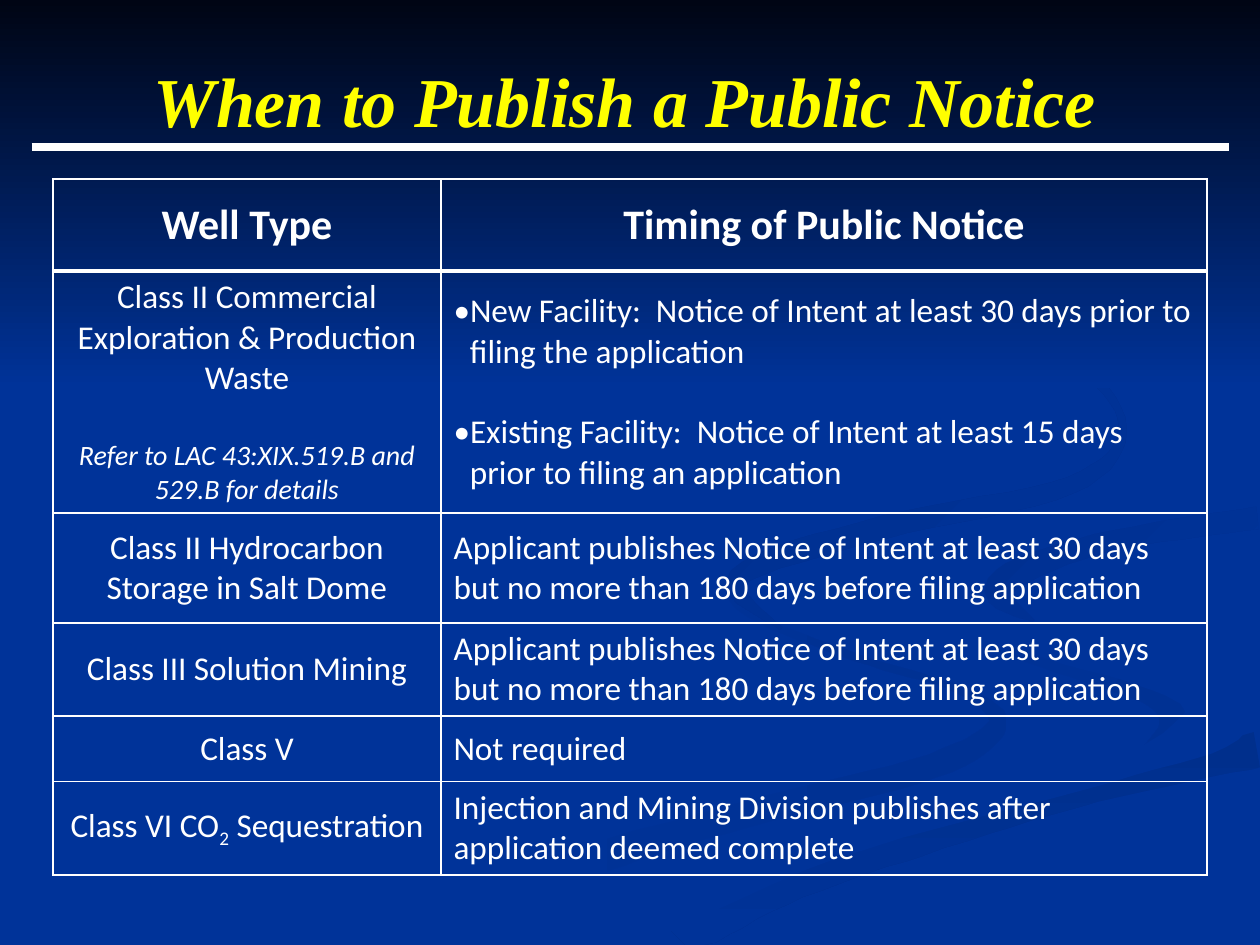
"""Build the public notice timing slide."""
from dataclasses import dataclass
from math import hypot

from lxml.etree import SubElement
from pptx import Presentation
from pptx.dml.color import RGBColor
from pptx.enum.shapes import MSO_CONNECTOR as Connector, MSO_SHAPE as Shape
from pptx.enum.text import MSO_ANCHOR as Anchor, PP_ALIGN as Align
from pptx.oxml.ns import qn
from pptx.util import Inches, Pt

WHITE = RGBColor(0xFF, 0xFF, 0xFF)
YELLOW = RGBColor(0xFF, 0xFF, 0x00)
BLUE = RGBColor(0x00, 0x33, 0x99)
SOFT_BLUE = RGBColor(0x00, 0x31, 0x93)
SHADE_BLUE = RGBColor(0x00, 0x2F, 0x8C)
LOOP_BLUE = RGBColor(0x00, 0x30, 0x91)
CURL_BLUE = RGBColor(0x00, 0x2F, 0x8E)
NIGHT = RGBColor(0x00, 0x05, 0x14)

SLIDE_WIDTH, SLIDE_HEIGHT = 10, 7.5
UNITS_PER_INCH = 100
STEPS_PER_SPAN = 8


@dataclass
class Ribbon:
    """A curved band: knots are (x, y, thickness) along its centre, in inches."""
    knots: list
    start: RGBColor
    end: RGBColor
    angle: int


LEFT_STREAM = Ribbon(
    [(5.73, 4.62, 0.02), (5.95, 4.88, 0.05), (6.8, 5.22, 0.06), (7.6, 5.47, 0.06),
     (7.92, 5.75, 0.15), (7.4, 6.08, 0.2), (5.9, 6.47, 0.2), (4.6, 6.87, 0.25),
     (3.3, 7.49, 0.3)], BLUE, SOFT_BLUE, 0)
RIGHT_STREAM = Ribbon(
    [(7.24, 4.66, 0.02), (7.5, 4.97, 0.06), (8.4, 5.29, 0.1), (9.15, 5.53, 0.16),
     (9.3, 5.78, 0.22), (9, 6.03, 0.02)], BLUE, SOFT_BLUE, 45)
LOWER_RIBBON = Ribbon(
    [(9.98, 5.95, 0.28), (8.7, 6.28, 0.17), (7.3, 6.68, 0.22), (6.2, 7.06, 0.25),
     (5.37, 7.49, 0.3)], SHADE_BLUE, BLUE, 90)
BROAD_RIBBON = Ribbon(
    [(9.99, 3.95, 0.15), (8.5, 4.19, 0.16), (7.55, 4.6, 0.5), (8.2, 5.06, 0.25),
     (9.3, 5.38, 0.3), (9.7, 5.65, 0.5), (8.8, 6.14, 0.14), (6.6, 6.75, 0.15),
     (4.9, 7.49, 0.2)], BLUE, BLUE, 0)
RIGHT_LOOP = Ribbon(
    [(9.98, 4.11, 0.18), (8.7, 4.32, 0.16), (7.93, 4.65, 0.22), (8.2, 4.93, 0.02)],
    LOOP_BLUE, BLUE, 45)
UPPER_CURL = Ribbon(
    [(7.62, 2.33, 0.01), (8.5, 2.84, 0.08), (8.91, 3.38, 0.06), (8.5, 3.85, 0.14),
     (7, 4.19, 0.18), (5.86, 4.58, 0.16), (6.2, 4.99, 0.02)], CURL_BLUE, BLUE, 45)
RIBBONS = [LEFT_STREAM, RIGHT_STREAM, LOWER_RIBBON, BROAD_RIBBON, RIGHT_LOOP, UPPER_CURL]

COLUMN_WIDTHS = [3.08, 6.08]
ROW_HEIGHTS = [0.73, 1.9, 0.87, 0.73, 0.52, 0.73]
INTENT = ("Applicant publishes Notice of Intent at least 30 days "
          "but no more than 180 days before filing application")
ROWS = [
    (["Well Type"], ["Timing of Public Notice"]),
    (["Class II Commercial Exploration & Production Waste",
      "Refer to LAC 43:XIX.519.B and 529.B for details"],
     ["New Facility:  Notice of Intent at least 30 days prior to filing the application",
      "Existing Facility:  Notice of Intent at least 15 days prior to filing an application"]),
    (["Class II Hydrocarbon Storage in Salt Dome"], [INTENT]),
    (["Class III Solution Mining"], [INTENT]),
    (["Class V"], ["Not required"]),
    (["Class VI CO_2_ Sequestration"],
     ["Injection and Mining Division publishes after application deemed complete"])]


def spline(before, start, end, after, t):
    """Return the Catmull-Rom value between start and end at fraction t."""
    return start + t / 2 * (end - before + t * (
        2 * before - 5 * start + 4 * end - after
        + t * (3 * (start - end) + after - before)))


def smooth(knots):
    """Return a dense smooth line through the knots."""
    padded = [knots[0], *knots, knots[-1]]
    line = [tuple(spline(*values, step / STEPS_PER_SPAN) for values in zip(*span))
            for span in zip(padded, padded[1:], padded[2:], padded[3:])
            for step in range(STEPS_PER_SPAN)]
    return line + [knots[-1]]


def ribbon_outline(knots):
    """Return both edges of a ribbon as one outline, kept on the slide."""
    line = smooth(knots)
    edges = {1: [], -1: []}
    for index, (x, y, thickness) in enumerate(line):
        previous, following = line[max(index - 1, 0)], line[min(index + 1, len(line) - 1)]
        run, rise = following[0] - previous[0], following[1] - previous[1]
        offset = thickness / 2 / hypot(run, rise)
        for side, edge in edges.items():
            edge.append((round(UNITS_PER_INCH * min(x - side * offset * rise, SLIDE_WIDTH)),
                         round(UNITS_PER_INCH * min(y + side * offset * run, SLIDE_HEIGHT))))
    return edges[1] + edges[-1][::-1]


def paint(shape, start, end, angle):
    """Fill a borderless shape with a gradient at a clockwise angle."""
    shape.shadow.inherit = False
    shape.line.fill.background()
    shape.fill.gradient()
    shape.fill.gradient_angle = (360 - angle) % 360
    for stop, color in zip(shape.fill.gradient_stops, (start, end)):
        stop.color.rgb = color


def add_ribbon(slide, ribbon):
    """Draw one background ribbon."""
    first, *others = ribbon_outline(ribbon.knots)
    builder = slide.shapes.build_freeform(*first, scale=Inches(1) / UNITS_PER_INCH)
    builder.add_line_segments(others, close=True)
    paint(builder.convert_to_shape(), ribbon.start, ribbon.end, ribbon.angle)


def style_font(font, name, size, color, bold=False, italic=False):
    """Set the look of a font."""
    font.name, font.size, font.bold, font.italic = name, Pt(size), bold, italic
    font.color.rgb = color


def add_title(slide, text):
    """Add the centred slide title."""
    frame = slide.shapes.add_textbox(
        Inches(0.42), Inches(0.42), Inches(9.08), Inches(0.58)).text_frame
    frame.word_wrap = True
    frame.margin_top, frame.margin_bottom = Inches(0.04), 0
    paragraph = frame.paragraphs[0]
    paragraph.text = text
    paragraph.alignment = Align.CENTER
    style_font(paragraph.font, "Times New Roman", 40, YELLOW, bold=True, italic=True)


def add_rule(slide):
    """Add the white rule below the title."""
    rule = slide.shapes.add_connector(
        Connector.STRAIGHT, Inches(0.25), Inches(1.17), Inches(9.75), Inches(1.17))
    rule.line.color.rgb = WHITE
    rule.line.width = Pt(4.5)
    SubElement(rule._element.spPr, qn("a:effectLst"))


def add_borders(cell, top, bottom):
    """Outline a cell in white with the given top and bottom widths."""
    properties = cell._tc.get_or_add_tcPr()
    for side, width in (("L", 1), ("R", 1), ("T", top), ("B", bottom)):
        line = SubElement(properties, qn(f"a:ln{side}"), w=str(Pt(width)))
        fill = SubElement(line, qn("a:solidFill"))
        SubElement(fill, qn("a:srgbClr"), val=str(WHITE))


def add_bullet(paragraph):
    """Give a paragraph a hanging bullet."""
    properties = paragraph._p.get_or_add_pPr()
    properties.set("marL", str(Inches(0.13)))
    properties.set("indent", str(-Inches(0.13)))
    SubElement(properties, qn("a:buFont"), typeface="Calibri")
    SubElement(properties, qn("a:buChar"), char="•")


def write_paragraph(paragraph, text):
    """Write text, lowering the parts between underscores."""
    for index, part in enumerate(text.split("_")):
        run = paragraph.add_run()
        run.text = part
        if index % 2:
            run._r.get_or_add_rPr().set("baseline", "-25000")


def fill_cell(cell, texts, is_header, is_type):
    """Write the paragraphs of one table cell."""
    cell.vertical_anchor = Anchor.MIDDLE
    for index, text in enumerate(texts):
        paragraph = cell.text_frame.add_paragraph() if index else cell.text_frame.paragraphs[0]
        write_paragraph(paragraph, text)
        paragraph.alignment = Align.CENTER if is_header or is_type else Align.LEFT
        if index:
            paragraph.space_before = Pt(23)
        if len(texts) > 1 and not is_type:
            add_bullet(paragraph)
        is_reference = is_type and index > 0
        size = 24 if is_header else 16 if is_reference else 19
        style_font(paragraph.font, "Calibri", size, WHITE, is_header, is_reference)


def add_notice_table(slide):
    """Add the table of well types and notice timing."""
    table = slide.shapes.add_table(
        len(ROWS), len(COLUMN_WIDTHS), Inches(0.42), Inches(1.42),
        Inches(sum(COLUMN_WIDTHS)), Inches(sum(ROW_HEIGHTS))).table
    table.first_row = table.horz_banding = False
    for column, width in zip(table.columns, COLUMN_WIDTHS):
        column.width = Inches(width)
    for row_index, (row, texts_by_column) in enumerate(zip(table.rows, ROWS)):
        row.height = Inches(ROW_HEIGHTS[row_index])
        for column_index, (cell, texts) in enumerate(zip(row.cells, texts_by_column)):
            add_borders(cell, 3 if row_index == 1 else 1, 3 if row_index == 0 else 1)
            cell.fill.background()
            fill_cell(cell, texts, row_index == 0, column_index == 0)


def main():
    """Build and save the slide."""
    presentation = Presentation()
    presentation.slide_width = Inches(SLIDE_WIDTH)
    presentation.slide_height = Inches(SLIDE_HEIGHT)
    slide = presentation.slides.add_slide(presentation.slide_layouts[6])
    slide.background.fill.solid()
    slide.background.fill.fore_color.rgb = BLUE
    for ribbon in RIBBONS:
        add_ribbon(slide, ribbon)
    band = slide.shapes.add_shape(Shape.RECTANGLE, 0, 0, Inches(SLIDE_WIDTH), Inches(3.08))
    paint(band, NIGHT, BLUE, 90)
    add_notice_table(slide)
    add_title(slide, "When to Publish a Public Notice")
    add_rule(slide)
    presentation.save("out.pptx")


if __name__ == "__main__":
    main()
